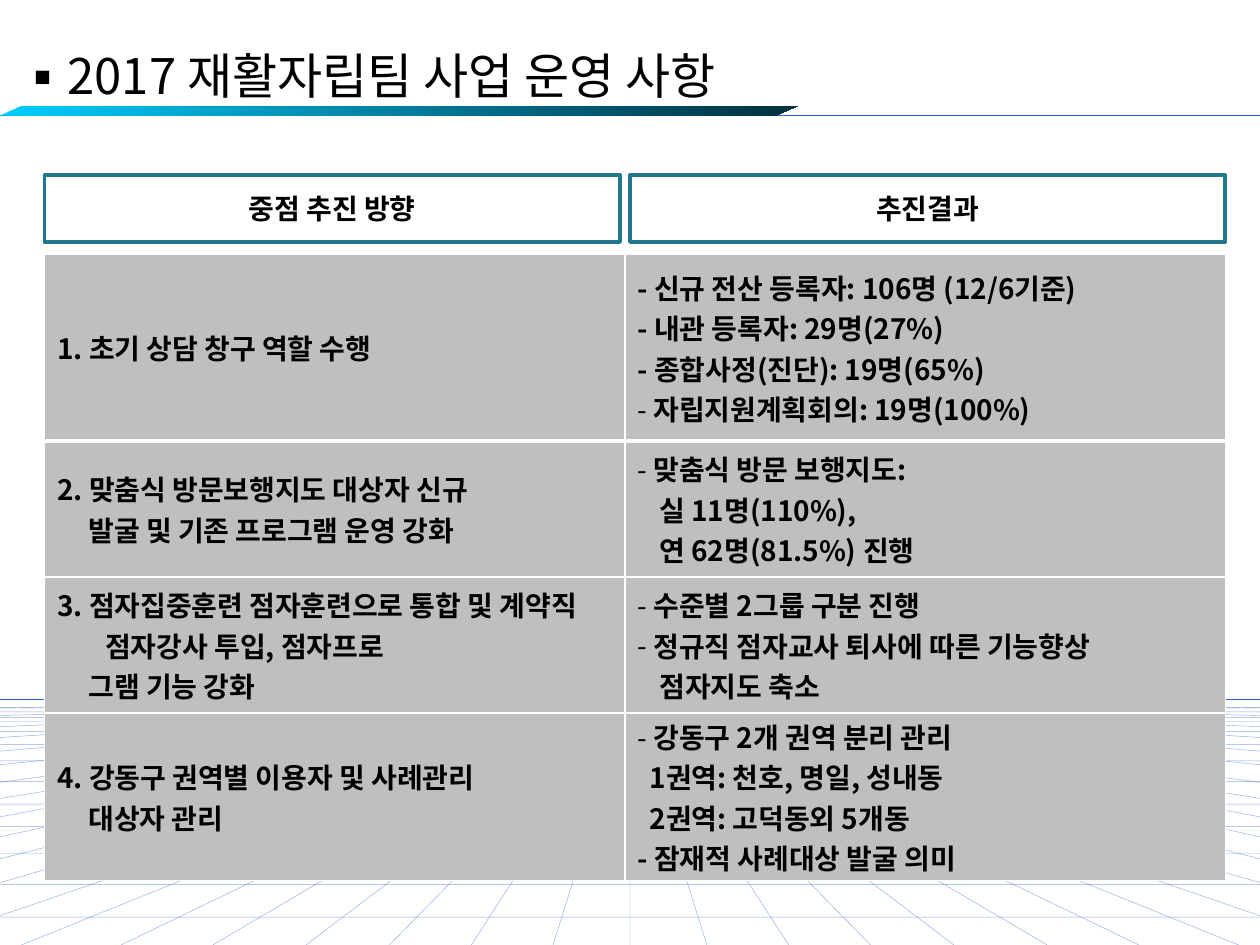
from lxml.etree import SubElement
from pptx import Presentation
from pptx.dml.color import RGBColor
from pptx.enum.shapes import MSO_CONNECTOR as CONN, MSO_SHAPE as SHAPE
from pptx.enum.text import MSO_ANCHOR as ANCHOR, PP_ALIGN as ALIGN
from pptx.oxml.ns import qn
from pptx.util import Cm, Pt

BLACK = RGBColor(0x00, 0x00, 0x00)
WHITE = RGBColor(0xFF, 0xFF, 0xFF)
GRAY = RGBColor(0xBF, 0xBF, 0xBF)
BLUE = RGBColor(0x33, 0x66, 0xCC)
TEAL = RGBColor(0x21, 0x78, 0x8D)
CYAN = RGBColor(0x00, 0xCC, 0xFF)
NAVY = RGBColor(0x00, 0x30, 0x3F)

WIDTH, HEIGHT = 25.4, 19.05
CENTER, HORIZON, REACH = 12.7, 14.1, 12.93
GRID_ROWS = (18.49, 17.83, 17.2, 16.66, 16.21, 15.75, 15.34, 15.01,
             14.75, 14.55, 14.46, 14.35, 14.27)
RAY_BOTTOMS = (1.55, 3.2, 4.85, 6.53, 8.41, 10.26, 12.27)
RAY_SIDES = (18.54, 17.86, 17.37, 16.92, 16.51, 16.13, 15.8, 15.44,
             15.16, 14.88, 14.66, 14.43, 14.27)

STYLES = {
    "title": (0.55, -0.55, "▪"),
    "plain": (0, 0, None),
    "item": (0.97, -0.97, None),
    "more": (0.63, 0, None),
    "dash": (0.32, -0.32, "-"),
    "under": (0.44, 0, None),
    "zone": (0.24, 0, None),
}
ROWS = [
    ([("item", "1. 초기 상담 창구 역할 수행")],
     [("plain", "- 신규 전산 등록자: 106명 (12/6기준)"),
      ("plain", "- 내관 등록자: 29명(27%)"),
      ("plain", "- 종합사정(진단): 19명(65%)"),
      ("dash", "자립지원계획회의: 19명(100%)")]),
    ([("item", "2. 맞춤식 방문보행지도 대상자 신규"),
      ("more", "발굴 및 기존 프로그램 운영 강화")],
     [("dash", "맞춤식 방문 보행지도:"),
      ("under", "실 11명(110%),"),
      ("under", "연 62명(81.5%) 진행")]),
    ([("item", "3. 점자집중훈련 점자훈련으로 통합 및 계약직 점자강사 투입, 점자프로"),
      ("more", "그램 기능 강화")],
     [("dash", "수준별 2그룹 구분 진행"),
      ("dash", "정규직 점자교사 퇴사에 따른 기능향상"),
      ("under", "점자지도 축소")]),
    ([("item", "4. 강동구 권역별 이용자 및 사례관리"),
      ("more", "대상자 관리")],
     [("dash", "강동구 2개 권역 분리 관리"),
      ("zone", "1권역: 천호, 명일, 성내동"),
      ("zone", "2권역: 고덕동외 5개동"),
      ("plain", "- 잠재적 사례대상 발굴 의미")]),
]


class Deck:
    """Holds the text style and the current slide, and draws each kind of element."""

    font = "Noto Sans CJK KR"

    def __init__(self, slide):
        self.shapes = slide.shapes

    def fill_text(self, tf, paragraphs, size=16, bold=True, align=ALIGN.LEFT):
        tf.word_wrap = True
        for i, (style, text) in enumerate(paragraphs):
            p = tf.add_paragraph() if i else tf.paragraphs[0]
            p.text = text
            p.alignment = align
            left, indent, bullet = STYLES[style]
            pPr = p._p.get_or_add_pPr()
            pPr.set("marL", str(Cm(left)))
            pPr.set("indent", str(Cm(indent)))
            if bullet:
                SubElement(pPr, qn("a:buFont"), typeface=self.font)
                SubElement(pPr, qn("a:buChar"), char=bullet)
            for r in p.runs:
                r.font.name, r.font.size, r.font.bold = self.font, Pt(size), bold
                r.font.color.rgb = BLACK
                SubElement(r._r.get_or_add_rPr(), qn("a:ea"), typeface=self.font)

    def line(self, x1, y1, x2, y2, width=0.25, alpha=55):
        sp = self.shapes.add_connector(CONN.STRAIGHT, Cm(x1), Cm(y1), Cm(x2), Cm(y2))
        sp.line.width = Pt(width)
        sp.line.color.rgb = BLUE
        color = sp.line._ln.find(".//" + qn("a:srgbClr"))
        SubElement(color, qn("a:alpha"), val=str(alpha * 1000))
        SubElement(sp._element.spPr, qn("a:effectLst"))

    def title(self, x, y, w, h, text):
        tf = self.shapes.add_textbox(Cm(x), Cm(y), Cm(w), Cm(h)).text_frame
        tf.margin_top = tf.margin_bottom = 0
        tf.vertical_anchor = ANCHOR.MIDDLE
        self.fill_text(tf, [("title", text)], 28, False)

    def ribbon(self, x, y, w, h):
        sp = self.shapes.add_shape(SHAPE.PARALLELOGRAM, Cm(x), Cm(y), Cm(w), Cm(h))
        sp.shadow.inherit = False
        sp.adjustments[0] = 2.3
        sp.fill.gradient()
        sp.fill.gradient_angle = 0
        for stop, color in zip(sp.fill.gradient_stops, (CYAN, NAVY)):
            stop.color.rgb = color
        sp.line.fill.background()

    def header(self, x, y, w, h, text):
        sp = self.shapes.add_shape(SHAPE.RECTANGLE, Cm(x), Cm(y), Cm(w), Cm(h))
        sp.shadow.inherit = False
        sp.fill.background()
        sp.line.color.rgb = TEAL
        sp.line.width = Pt(2)
        sp.text_frame.vertical_anchor = ANCHOR.MIDDLE
        self.fill_text(sp.text_frame, [("plain", text)], align=ALIGN.CENTER)

    def borders(self, cell, **widths):
        tcPr = cell._tc.get_or_add_tcPr()
        for i, side in enumerate("LRTB"):
            ln = tcPr.makeelement(qn("a:ln" + side), w=str(Pt(widths.get(side, 1))))
            fill = SubElement(ln, qn("a:solidFill"))
            SubElement(fill, qn("a:srgbClr"), val=str(WHITE))
            tcPr.insert(i, ln)

    def table(self, x, y, widths, heights, rows):
        table = self.shapes.add_table(len(heights), len(widths), Cm(x), Cm(y),
                                      Cm(sum(widths)), Cm(sum(heights))).table
        table.first_row = table.horz_banding = False
        for column, width in zip(table.columns, widths):
            column.width = Cm(width)
        for i, (height, row) in enumerate(zip(heights, rows)):
            table.rows[i].height = Cm(height)
            for j, paragraphs in enumerate(row):
                cell = table.cell(i, j)
                cell.margin_top = cell.margin_bottom = Cm(0.05)
                cell.vertical_anchor = ANCHOR.MIDDLE
                cell.fill.solid()
                cell.fill.fore_color.rgb = GRAY
                self.borders(cell, T=3 if i == 1 else 1, B=3 if i == 0 else 1)
                self.fill_text(cell.text_frame, paragraphs)

    def floor(self):
        for y in GRID_ROWS:
            self.line(0, y, WIDTH, y)
        self.line(CENTER, HORIZON, CENTER, HEIGHT)
        ends = [(dx, HEIGHT) for dx in RAY_BOTTOMS] + [(REACH, y) for y in RAY_SIDES]
        for dx, y in ends:
            for side in (1, -1):
                self.line(CENTER, HORIZON, CENTER + side * dx, y)
        self.line(0, HORIZON, WIDTH, HORIZON, 0.75, 100)


def main():
    prs = Presentation()
    prs.slide_width, prs.slide_height = Cm(WIDTH), Cm(HEIGHT)
    deck = Deck(prs.slides.add_slide(prs.slide_layouts[6]))
    deck.floor()
    deck.line(0, 2.33, WIDTH, 2.33, 0.75, 100)
    deck.title(0.13, 0.79, 16.71, 1.45, "2017 재활자립팀 사업 운영 사항")
    deck.ribbon(0, 2.13, 16.1, 0.2)
    deck.table(0.9, 5.13, (11.7, 12.1), (3.76, 2.74, 2.74, 3.38), ROWS)
    deck.header(0.9, 3.53, 11.6, 1.35, "중점 추진 방향")
    deck.header(12.7, 3.53, 12, 1.35, "추진결과")
    prs.save("out.pptx")


if __name__ == "__main__":
    main()
